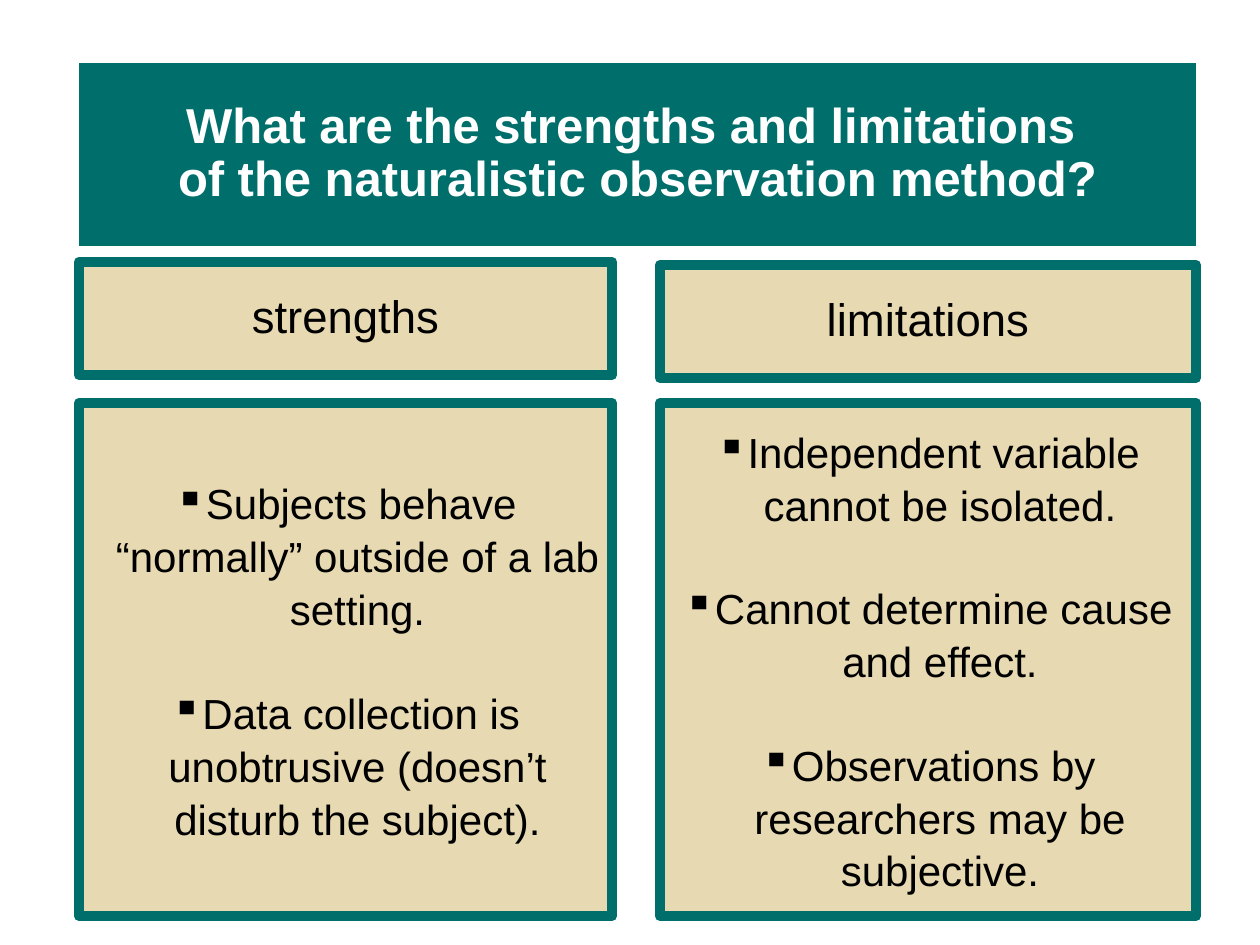
from lxml import etree
from pptx import Presentation
from pptx import util as u
from pptx.dml.color import RGBColor
from pptx.enum import shapes, text
from pptx.oxml.ns import qn

TEAL = RGBColor(0x00, 0x6F, 0x6C)
SAND = RGBColor(0xE7, 0xD9, 0xB1)
WHITE = RGBColor(0xFF, 0xFF, 0xFF)
BLACK = RGBColor(0x00, 0x00, 0x00)
PX = 914400 / 126


def px(*vals):
    return [u.Emu(round(v * PX)) for v in vals]


def style(para, size, color, space):
    para.alignment = text.PP_ALIGN.CENTER
    para.line_spacing = space
    para.font.name = "Arial"
    para.font.size = u.Pt(size)
    para.font.color.rgb = color


deck = Presentation()
deck.slide_width, deck.slide_height = px(1260, 945)
slide = deck.slides.add_slide(deck.slide_layouts[5])

# Title band
title = slide.shapes.title
title.left, title.top, title.width, title.height = px(79, 63, 1117, 183)
title.fill.solid()
title.fill.fore_color.rgb = TEAL
frame = title.text_frame
frame.text = "What are the strengths and limitations \vof the naturalistic observation method?"
frame.auto_size = text.MSO_AUTO_SIZE.NONE
frame.vertical_anchor = text.MSO_ANCHOR.MIDDLE
style(frame.paragraphs[0], 28, WHITE, 0.9)
frame.paragraphs[0].font.bold = True

# Columns: left, width, top of heading, heading, points
columns = [
    (79, 533, 262, "strengths", [
        "Subjects behave “normally” outside of a lab setting.",
        "Data collection is unobtrusive (doesn’t disturb the subject).",
    ]),
    (660, 536, 265, "limitations", [
        "Independent variable cannot be isolated.",
        "Cannot determine cause and effect.",
        "Observations by researchers may be subjective.",
    ]),
]

for left, width, top, head, points in columns:
    # Heading box above, list box below
    for y, high, lines in ((top, 113, [head]), (403, 513, points)):
        box = slide.shapes.add_shape(
            shapes.MSO_SHAPE.RECTANGLE, *px(left, y, width, high))
        box.shadow.inherit = False
        box.fill.solid()
        box.fill.fore_color.rgb = SAND
        box.line.color.rgb = TEAL
        box.line.width = u.Pt(6)
        frame = box.text_frame
        frame.word_wrap = True
        frame.vertical_anchor = text.MSO_ANCHOR.MIDDLE
        for i, line in enumerate(lines):
            para = frame.paragraphs[0] if i == 0 else frame.add_paragraph()
            para.text = line
            if lines is not points:
                style(para, 26, BLACK, 0.9)
                continue
            style(para, 24, BLACK, 1.05)
            if i:
                para.space_before = u.Pt(29)
            # Square bullet with a hanging indent
            props = para._p.get_or_add_pPr()
            props.set("marL", str(u.Inches(0.19)))
            props.set("indent", str(-u.Inches(0.19)))
            bullet = etree.Element(qn("a:buChar"), char="▪")
            props.insert_element_before(bullet, "a:tabLst", "a:defRPr", "a:extLst")

deck.save("out.pptx")
